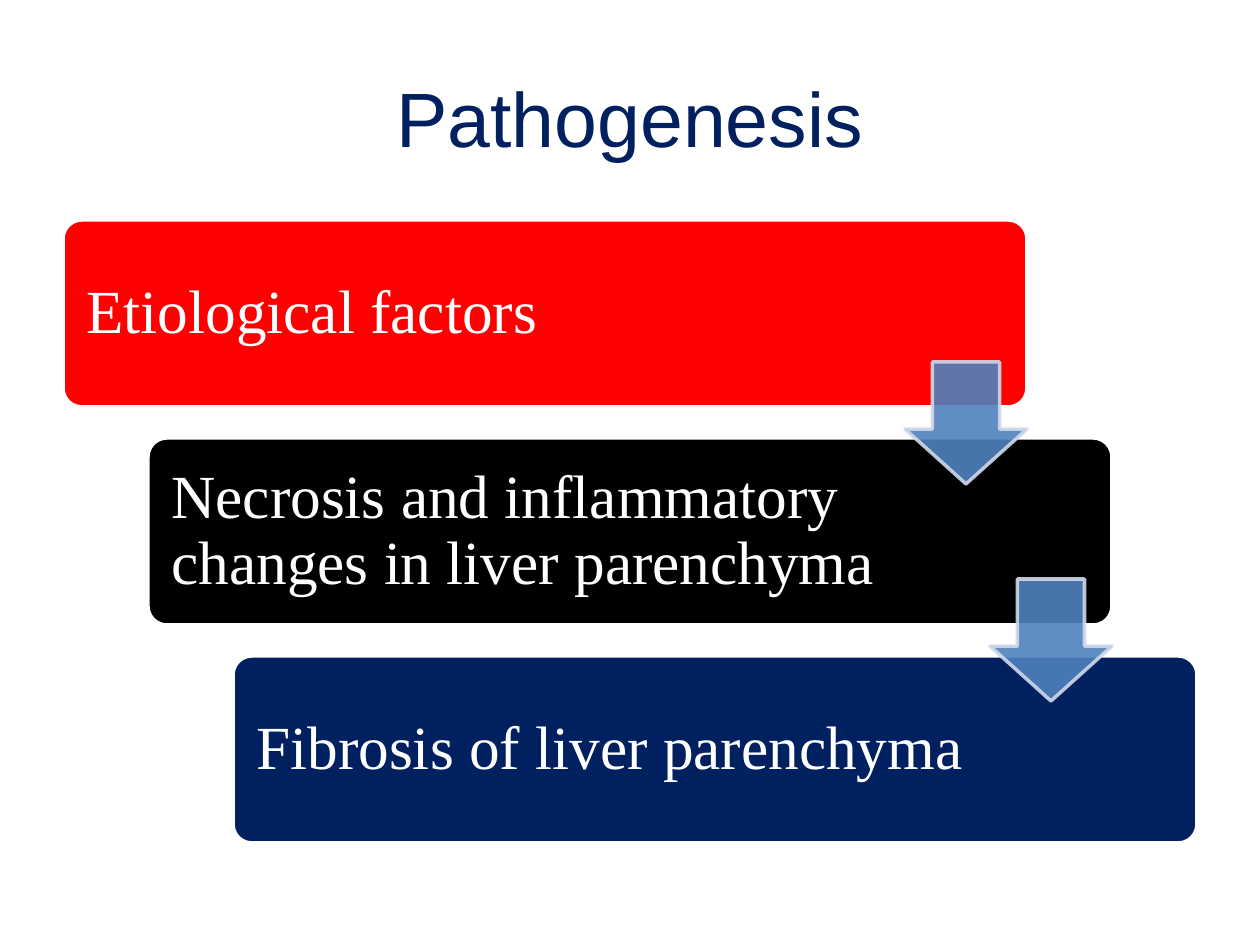
import pptx
import pptx.util
from lxml import etree
from pptx.dml.color import RGBColor
from pptx.enum.shapes import MSO_SHAPE
from pptx.enum.text import MSO_ANCHOR, PP_ALIGN
from pptx.oxml.ns import qn

PX = 914400 / 126  # EMU per pixel
NAVY = RGBColor(0x00, 0x20, 0x60)
RED = RGBColor(0xFF, 0x00, 0x00)
BLACK = RGBColor(0x00, 0x00, 0x00)
WHITE = RGBColor(0xFF, 0xFF, 0xFF)
ARROW_BLUE = RGBColor(0x4F, 0x81, 0xBD)
ARROW_EDGE = RGBColor(0xD0, 0xD8, 0xE8)

STEPS = [
    ("Etiological factors", RED),
    ("Necrosis and inflammatory changes in liver parenchyma", BLACK),
    ("Fibrosis of liver parenchyma", NAVY),
]
STEP_X, STEP_Y = 85, 218


def px(length):
    return pptx.util.Emu(round(length * PX))


def add_block(page, preset, bounds, fill, edge):
    block = page.shapes.add_shape(preset, *map(px, bounds))
    block.shadow.inherit = False
    block.fill.solid()
    block.fill.fore_color.rgb = fill
    block.line.color.rgb = edge
    block.line.width = pptx.util.Pt(2)
    return block


deck = pptx.Presentation()
deck.slide_width, deck.slide_height = px(1260), px(945)
page = deck.slides.add_slide(deck.slide_layouts[6])

title = page.shapes.add_textbox(px(63), px(38), px(1134), px(157))
title.text_frame.word_wrap = True
title.text_frame.vertical_anchor = MSO_ANCHOR.MIDDLE
para = title.text_frame.paragraphs[0]
para.text = "Pathogenesis"
para.alignment = PP_ALIGN.CENTER
para.font.name = "Arial"
para.font.size = pptx.util.Pt(44)
para.font.color.rgb = NAVY

for index, (label, color) in enumerate(STEPS):
    bounds = (63 + index * STEP_X, 220 + index * STEP_Y, 964, 187)
    card = add_block(page, MSO_SHAPE.ROUNDED_RECTANGLE, bounds, color, WHITE)
    card.adjustments[0] = 0.1
    frame = card.text_frame
    frame.word_wrap = True
    frame.vertical_anchor = MSO_ANCHOR.MIDDLE
    frame.margin_left, frame.margin_right = px(18), px(200)
    para = frame.paragraphs[0]
    para.text = label
    para.alignment = PP_ALIGN.LEFT
    para.line_spacing = 0.9
    para.font.name = "Times New Roman"
    para.font.size = pptx.util.Pt(35)
    para.font.color.rgb = WHITE

for index in range(len(STEPS) - 1):
    bounds = (905 + index * STEP_X, 362 + index * (STEP_Y - 1), 122, 122)
    arrow = add_block(page, MSO_SHAPE.DOWN_ARROW, bounds, ARROW_BLUE, ARROW_EDGE)
    arrow.adjustments[0] = 0.55
    arrow.adjustments[1] = 0.45
    for color in arrow.fill._xPr.iter(qn("a:srgbClr")):
        etree.SubElement(color, qn("a:alpha"), val="90000")

deck.save("out.pptx")
